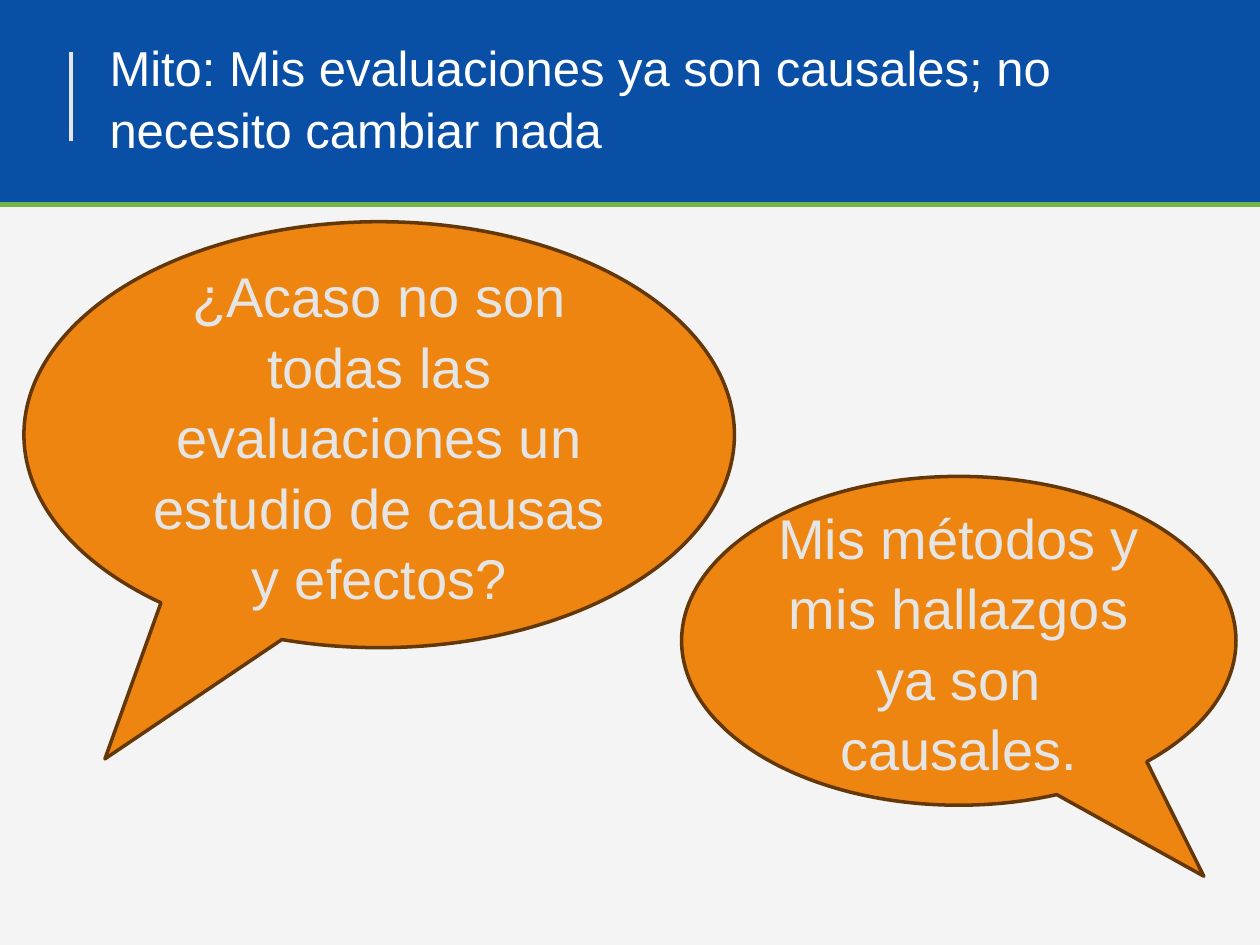
from lxml import etree
from pptx import Presentation
from pptx.dml.color import RGBColor
from pptx.enum import shapes, text
from pptx.oxml.ns import qn
from pptx.util import Pt

# Content: lengths in points
TITLE = "Mito: Mis evaluaciones ya son causales; no necesito cambiar nada"
BUBBLES = [  # text, box, pointer tip relative to the centre
    ("¿Acaso no son todas las evaluaciones un estudio de causas y efectos?",
     (13.7, 126.7, 406, 243.4), (-0.386, 0.761)),
    ("Mis métodos y mis hallazgos ya son causales.",
     (389.5, 272.2, 316.8, 187.9), (0.442, 0.716)),
]
WIDTH, HEIGHT, BAND = 720, 540, 117

THEME = {
    "page": "F4F4F4", "band": "0A4FA6", "rule": "73B54B", "pale": "E5E5E5",
    "white": "FFFFFF", "bubble": "EE8510", "edge": "643806",
    "font": "Arial", "title_size": 28, "bubble_size": 32,
}


def color(name):
    return RGBColor.from_string(THEME[name])


def place(sp, box):
    sp.left, sp.top, sp.width, sp.height = map(Pt, box)


def write(sp, words, size, ink, align, inset):
    tf = sp.text_frame
    tf.word_wrap = True
    tf.auto_size = text.MSO_AUTO_SIZE.NONE
    tf.vertical_anchor = text.MSO_ANCHOR.MIDDLE
    tf.margin_left = tf.margin_right = Pt(inset)
    tf.margin_top = tf.margin_bottom = Pt(3.6)
    p = tf.paragraphs[0]
    p.alignment = align
    p.line_spacing = 1.05
    r = p.add_run()
    r.text = words
    r.font.name = THEME["font"]
    r.font.size = Pt(THEME[size])
    r.font.color.rgb = color(ink)


def add_shape(slide, kind, box, fill):
    sp = slide.shapes.add_shape(kind, *map(Pt, box))
    sp.shadow.inherit = False
    sp.fill.solid()
    sp.fill.fore_color.rgb = color(fill)
    return sp


def add_line(slide, ends, ink, width):
    line = slide.shapes.add_connector(shapes.MSO_CONNECTOR.STRAIGHT, *map(Pt, ends))
    line.line.color.rgb = color(ink)
    line.line.width = Pt(width)
    etree.SubElement(line._element.spPr, qn("a:effectLst"))


def main():
    prs = Presentation()
    prs.slide_width, prs.slide_height = Pt(WIDTH), Pt(HEIGHT)
    slide = prs.slides.add_slide(prs.slide_layouts[5])
    slide.background.fill.solid()
    slide.background.fill.fore_color.rgb = color("page")

    # Header band with its rule
    band = add_shape(slide, shapes.MSO_SHAPE.RECTANGLE, (0, 0, WIDTH, BAND), "band")
    band.line.fill.background()
    add_line(slide, (0, BAND, WIDTH, BAND), "rule", 3)

    # Title, brought in front of the band
    title = slide.shapes.title
    slide.shapes._spTree.append(title._element)
    place(title, (59, 32.4, 607, 45.4))
    write(title, TITLE, "title_size", "white", text.PP_ALIGN.LEFT, 3.6)
    add_line(slide, (40.5, 29.5, 40.5, 80.6), "pale", 2)

    # Speech bubbles
    for words, box, tip in BUBBLES:
        sp = add_shape(slide, shapes.MSO_SHAPE.OVAL_CALLOUT, box, "bubble")
        sp.adjustments[0], sp.adjustments[1] = tip
        sp.line.color.rgb = color("edge")
        sp.line.width = Pt(2)
        write(sp, words, "bubble_size", "pale", text.PP_ALIGN.CENTER, 7.2)

    prs.save("out.pptx")


if __name__ == "__main__":
    main()
